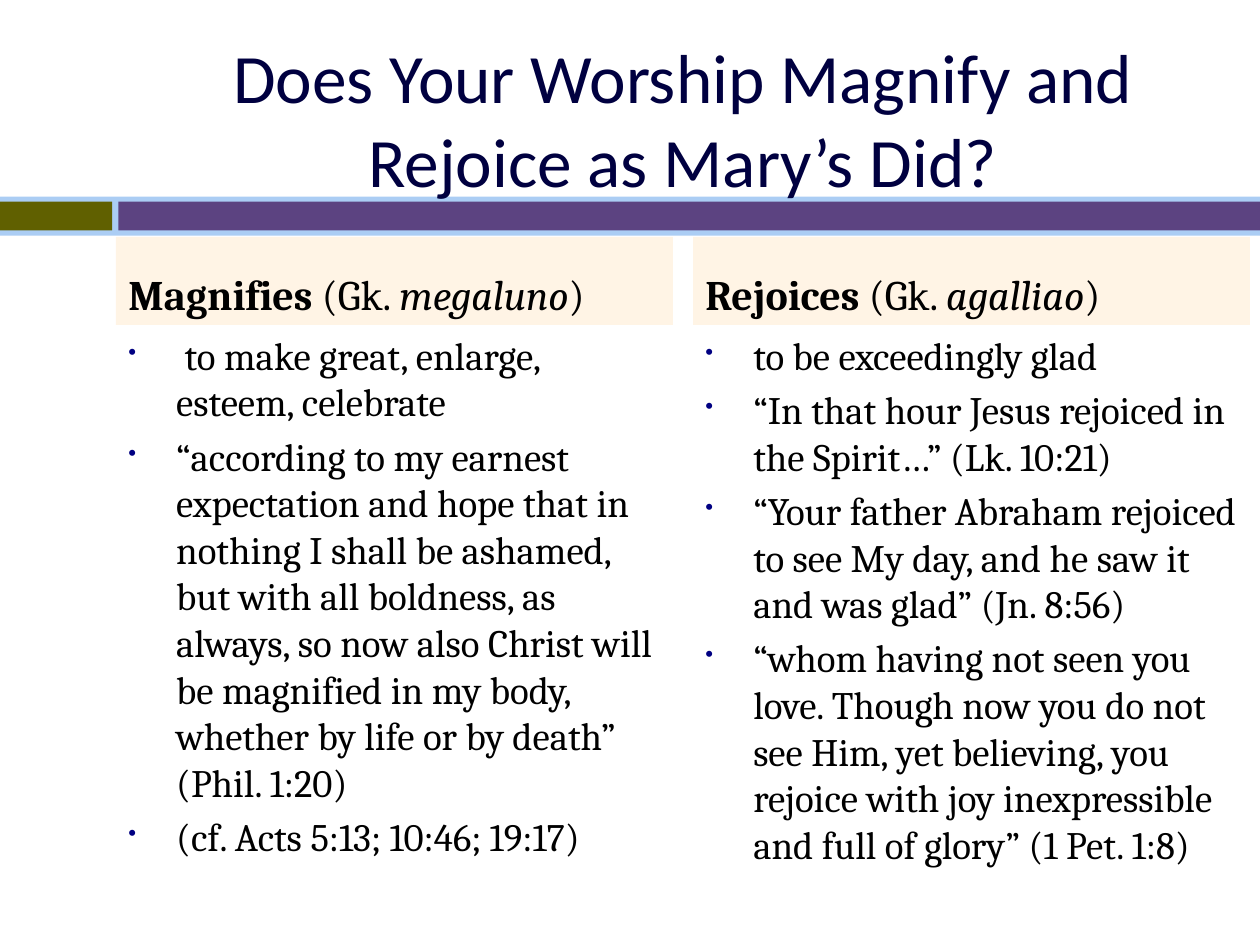
from lxml import etree
from pptx import Presentation
from pptx.dml.color import RGBColor
from pptx.enum.shapes import MSO_SHAPE
from pptx.enum.text import MSO_ANCHOR, PP_ALIGN
from pptx.oxml.ns import qn
from pptx.util import Inches, Pt

RECTANGLE = MSO_SHAPE.RECTANGLE
TOP, MIDDLE, BOTTOM = MSO_ANCHOR.TOP, MSO_ANCHOR.MIDDLE, MSO_ANCHOR.BOTTOM
LEFT, CENTER = PP_ALIGN.LEFT, PP_ALIGN.CENTER

COLORS = {
    "band": "ABCDF4", "olive": "606000", "purple": "5C4381",
    "title": "000040", "text": "000000", "bullet": "000082", "header": "FF9900",
}
TITLE_FONT, BODY_FONT = "Calibri", "Cambria"
COLUMN_LEFTS, COLUMN_WIDTH = (0.92, 5.5), 4.42

COLUMNS = [
    ("Magnifies ", "megaluno", [
        " to make great, enlarge, esteem, celebrate",
        "“according to my earnest expectation and hope that in nothing I shall be "
        "ashamed, but with all boldness, as always, so now also Christ will be "
        "magnified in my body, whether by life or by death” (Phil. 1:20)",
        "(cf. Acts 5:13; 10:46; 19:17)",
    ]),
    ("Rejoices ", "agalliao", [
        "to be exceedingly glad",
        "“In that hour Jesus rejoiced in the Spirit…” (Lk. 10:21)",
        "“Your father Abraham rejoiced to see My day, and he saw it and was glad” "
        "(Jn. 8:56)",
        "“whom having not seen you love. Though now you do not see Him, yet "
        "believing, you rejoice with joy inexpressible and full of glory” "
        "(1 Pet. 1:8)",
    ]),
]


def add_span(para, text, size, font=BODY_FONT, color="text", bold=False, italic=False):
    span = para.add_run()
    span.text = text
    span.font.name, span.font.size = font, Pt(size)
    span.font.bold, span.font.italic = bold, italic
    span.font.color.rgb = RGBColor.from_string(COLORS[color])


def add_bullet(para, indent=0.38):
    properties = para._p.get_or_add_pPr()
    properties.set("marL", str(Inches(indent)))
    properties.set("indent", str(Inches(-indent)))
    color = etree.SubElement(properties, qn("a:buClr"))
    etree.SubElement(color, qn("a:srgbClr"), val=COLORS["bullet"])
    etree.SubElement(properties, qn("a:buSzPct"), val="60000")
    etree.SubElement(properties, qn("a:buChar"), char="•")


class SlideBuilder:
    def __init__(self, deck):
        self.page = deck.slides.add_slide(deck.slide_layouts[6])

    def bar(self, left, top, width, height, color, opacity=None):
        box = self.page.shapes.add_shape(
            RECTANGLE, Inches(left), Inches(top), Inches(width), Inches(height))
        box.shadow.inherit = False
        box.line.fill.background()
        box.fill.solid()
        box.fill.fore_color.rgb = RGBColor.from_string(COLORS[color])
        if opacity is not None:
            fill = box._element.spPr.find(".//" + qn("a:srgbClr"))
            etree.SubElement(fill, qn("a:alpha"), val=str(opacity * 1000))
        return box

    def text_box(self, left, top, width, height):
        return self.page.shapes.add_textbox(
            Inches(left), Inches(top), Inches(width), Inches(height))

    def fill_text(self, box, paragraphs, size, anchor=TOP, align=LEFT, bullets=False,
                  gap=0.2, **style):
        frame = box.text_frame
        frame.word_wrap = True
        frame.vertical_anchor = anchor
        for index, spans in enumerate(paragraphs):
            para = frame.add_paragraph() if index else frame.paragraphs[0]
            para.alignment = align
            para.space_before = Pt(round(size * gap, 1))
            if bullets:
                add_bullet(para)
            for text, emphasis in spans:
                add_span(para, text, size, **style, **emphasis)

    def title(self, text):
        box = self.text_box(0.92, 0.31, 9, 1.25)
        self.fill_text(box, [[(text, {})]], 39.6, MIDDLE, CENTER, gap=0,
                       font=TITLE_FONT, color="title")

    def column(self, left, word, greek, points):
        header = self.bar(left, 1.88, COLUMN_WIDTH, 0.7, "header", opacity=10)
        heading = [(word, {"bold": True}), ("(Gk. ", {}),
                   (greek, {"italic": True}), (")", {})]
        self.fill_text(header, [heading], 24, BOTTOM)
        body = self.text_box(left, 2.58, COLUMN_WIDTH, 4.59)
        self.fill_text(body, [[(point, {})] for point in points], 22.2, bullets=True)


def main():
    deck = Presentation()
    deck.slide_width, deck.slide_height = Inches(10), Inches(7.5)
    slide = SlideBuilder(deck)

    # Divider band
    slide.bar(0, 1.56, 10, 0.31, "band")
    slide.bar(0, 1.6, 0.89, 0.23, "olive")
    slide.bar(0.94, 1.6, 9.06, 0.23, "purple")

    # Title and the two compared words
    slide.title("Does Your Worship Magnify and Rejoice as Mary’s Did?")
    for left, column in zip(COLUMN_LEFTS, COLUMNS):
        slide.column(left, *column)

    deck.save("out.pptx")


if __name__ == "__main__":
    main()
